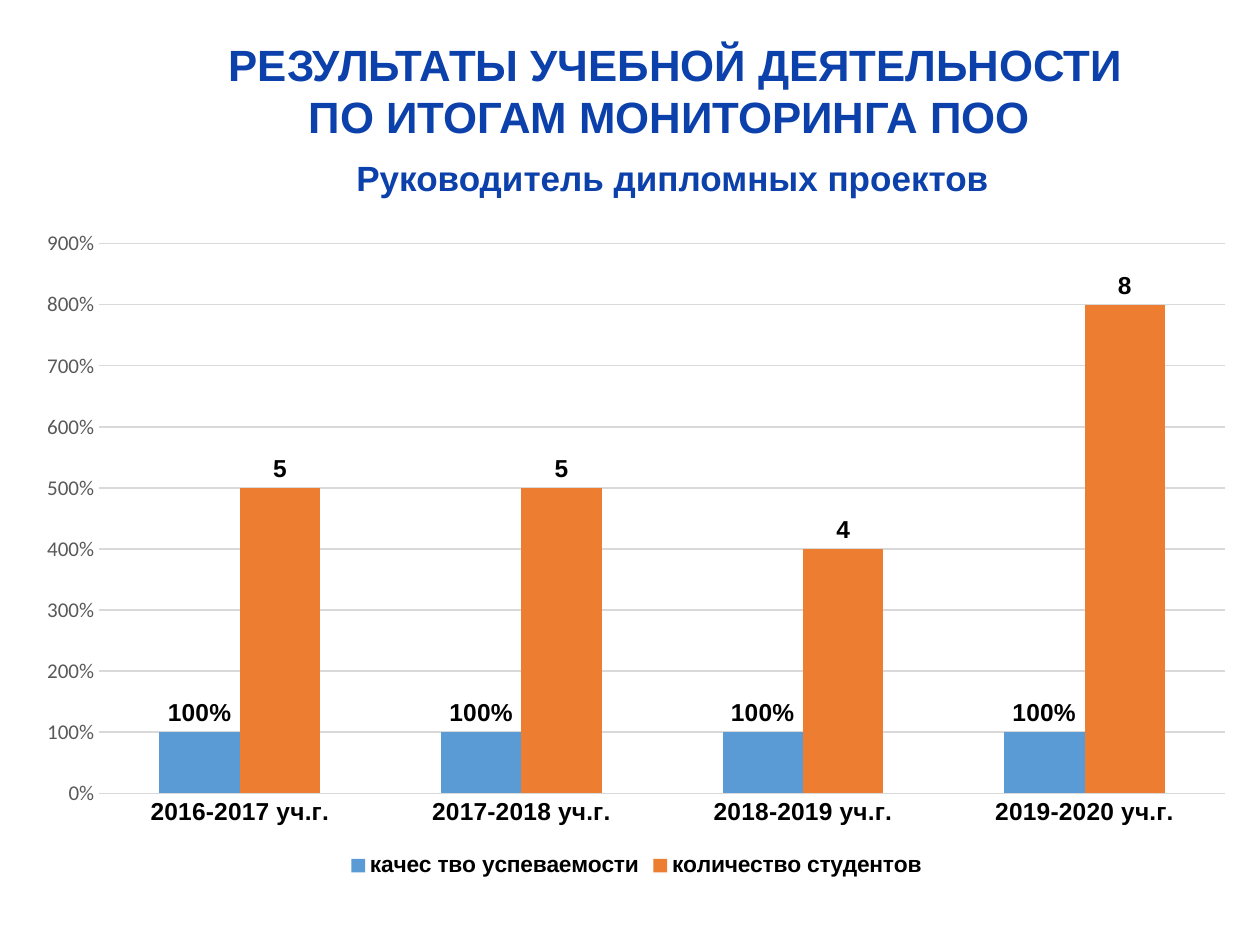
from pptx import Presentation
from pptx.chart.data import CategoryChartData
from pptx.dml.color import RGBColor
from pptx.enum.chart import XL_CHART_TYPE as ChartType
from pptx.enum.chart import XL_LABEL_POSITION as LabelPos
from pptx.enum.chart import XL_LEGEND_POSITION as LegendPos
from pptx.enum.chart import XL_TICK_MARK as TickMark
from pptx.enum.text import PP_ALIGN as Align
from pptx.util import Inches, Pt

BLUE = "0C40AA"
BLACK = "000000"
YEARS = ["2016-2017 уч.г.", "2017-2018 уч.г.", "2018-2019 уч.г.", "2019-2020 уч.г."]
# name, values, colour, number format
SERIES = [
    ("качес тво успеваемости", (1, 1, 1, 1), "5B9BD5", "0%"),
    ("количество студентов", (5, 5, 4, 8), "ED7D31", "General"),
]


def rgb(value):
    return RGBColor.from_string(value)


def style_font(font, size, color=BLACK, bold=True, name="Arial"):
    font.size = Pt(size)
    font.bold = bold
    font.name = name
    font.color.rgb = rgb(color)


def add_text(slide, box, lines, size, color=BLUE, align=Align.LEFT, wrap=True):
    frame = slide.shapes.add_textbox(*map(Inches, box)).text_frame
    frame.word_wrap = wrap
    for index, line in enumerate(lines):
        paragraph = frame.paragraphs[0] if index == 0 else frame.add_paragraph()
        paragraph.alignment = align
        run = paragraph.add_run()
        run.text = line
        style_font(run.font, size, color)


def add_heading(slide, left, top):
    add_text(slide, (left, top, 10, 0.94),
             ["РЕЗУЛЬТАТЫ УЧЕБНОЙ ДЕЯТЕЛЬНОСТИ", "ПО ИТОГАМ МОНИТОРИНГА ПОО "],
             25, align=Align.CENTER)
    add_text(slide, (left + 2.37, top + 0.94, 5.26, 0.44),
             ["Руководитель дипломных проектов"], 20, wrap=False)


def style_axes(chart):
    years, scale = chart.category_axis, chart.value_axis
    for axis in (years, scale):
        axis.major_tick_mark = axis.minor_tick_mark = TickMark.NONE
        axis.format.line.fill.background()
    style_font(years.tick_labels.font, 14)
    style_font(scale.tick_labels.font, 12, "595959", False, "Calibri")
    scale.tick_labels.number_format = "0%"
    scale.tick_labels.number_format_is_linked = False
    scale.minimum_scale, scale.maximum_scale, scale.major_unit = 0, 9, 1
    grid = scale.major_gridlines.format.line
    grid.width = Pt(0.75)
    grid.color.rgb = rgb("D9D9D9")


def add_results_chart(slide, box):
    data = CategoryChartData()
    data.categories = YEARS
    for name, values, _, number_format in SERIES:
        data.add_series(name, values, number_format)
    chart = slide.shapes.add_chart(
        ChartType.COLUMN_CLUSTERED, *map(Inches, box), data).chart
    style_font(chart.font, 10, bold=False, name="Calibri")
    chart.has_title = False
    style_axes(chart)

    chart.has_legend = True
    chart.legend.position = LegendPos.BOTTOM
    chart.legend.include_in_layout = False
    style_font(chart.legend.font, 13)

    plot = chart.plots[0]
    plot.vary_by_categories = False
    plot.gap_width = 150
    plot.overlap = 0
    for columns, (_, _, color, number_format) in zip(plot.series, SERIES):
        columns.format.fill.solid()
        columns.format.fill.fore_color.rgb = rgb(color)
        columns.invert_if_negative = False
        labels = columns.data_labels
        labels.show_value = True
        labels.position = LabelPos.OUTSIDE_END
        labels.number_format = number_format
        labels.number_format_is_linked = False
        style_font(labels.font, 14)


def main():
    deck = Presentation()
    deck.slide_width, deck.slide_height = Inches(10), Inches(7.5)
    slide = deck.slides.add_slide(deck.slide_layouts[6])
    add_heading(slide, 0.36, 0.25)
    add_results_chart(slide, (0.18, 1.73, 9.74, 5.28))
    deck.save("out.pptx")


if __name__ == "__main__":
    main()
